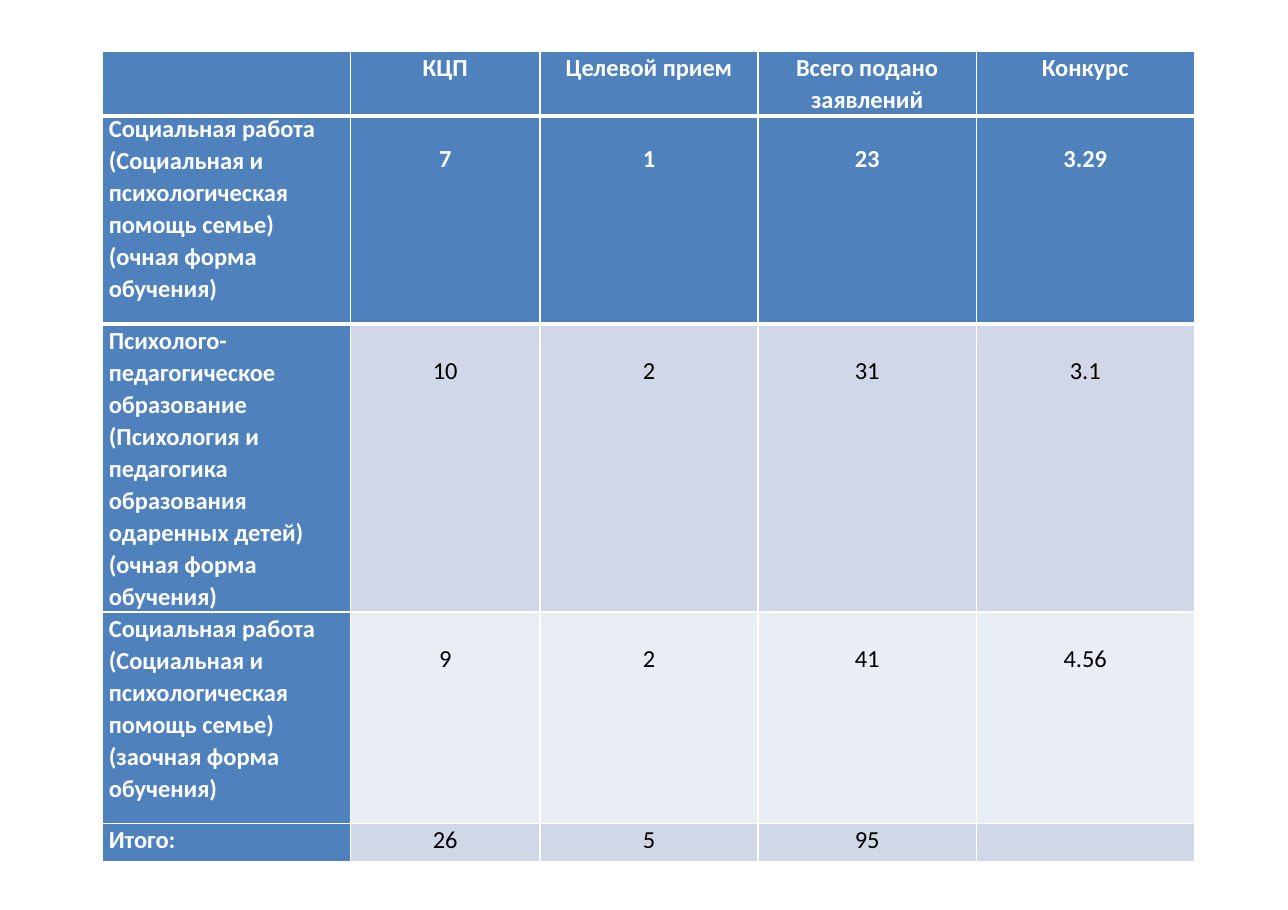
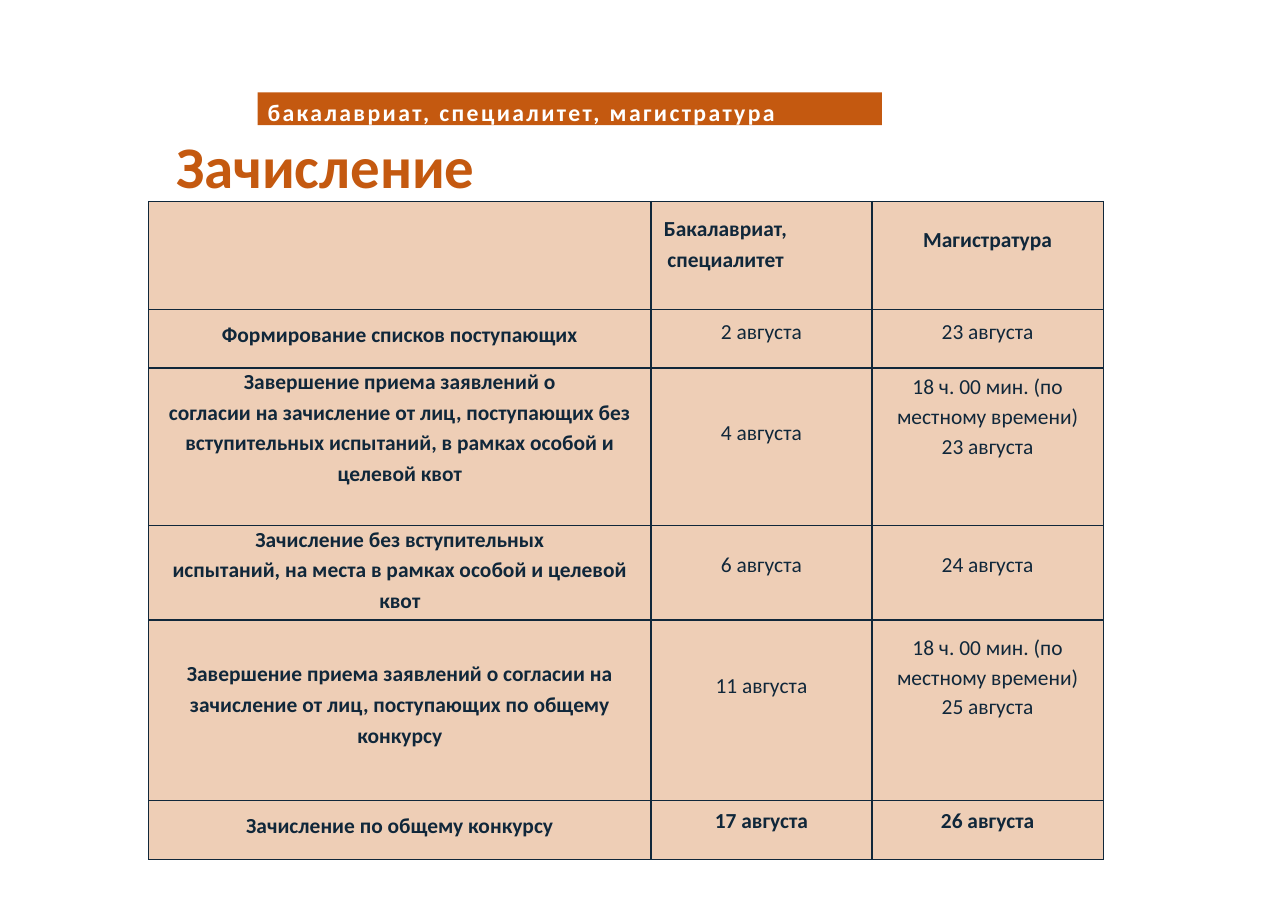
from dataclasses import dataclass

import pptx
import pptx.dml.color
import pptx.enum.shapes
import pptx.enum.text
import pptx.oxml
import pptx.oxml.ns
import pptx.slide
import pptx.table
import pptx.text.text
import pptx.util

Cm = pptx.util.Cm
Pt = pptx.util.Pt
RGBColor = pptx.dml.color.RGBColor
Align = pptx.enum.text.PP_ALIGN

FONT = "Calibri"
WHITE = RGBColor(0xFF, 0xFF, 0xFF)
BLACK = RGBColor(0x00, 0x00, 0x00)
BLUE = RGBColor(0x4F, 0x81, 0xBD)
BAND_DARK = RGBColor(0xD0, 0xD8, 0xE8)
BAND_LIGHT = RGBColor(0xE9, 0xED, 0xF4)
ORANGE = RGBColor(0xC4, 0x59, 0x10)
PEACH = RGBColor(0xEE, 0xCE, 0xB6)
NAVY = RGBColor(0x10, 0x27, 0x3A)

SINGLE = 1.0
COMPETITION_SPACING = 1.07
COMPETITION_SIDE = 0.15
VALUE_DROP = 0.7
COMPETITION_COLUMNS = (5.72, 4.37, 5.03, 5.03, 5.03)


@dataclass(frozen=True)
class TableCell:
    """Text and look of one cell; lengths in centimetres."""

    paragraphs: tuple[str, ...] = ()
    fill: RGBColor = PEACH
    color: RGBColor = NAVY
    bold: bool = False
    align: Align = Align.CENTER
    top: float = 0.0
    side: float = 0.0
    spacing: float = SINGLE
    hanging: float = 0.0


@dataclass(frozen=True)
class TableRow:
    height: float
    cells: tuple[TableCell, ...]
    bottom_line: float = 1.0


@dataclass(frozen=True)
class TableLayout:
    left: float
    top: float
    columns: tuple[float, ...]
    rows: tuple[TableRow, ...]
    font_size: float
    line_color: RGBColor


def add_run(paragraph: pptx.text.text._Paragraph, text: str, size: float,
            color: RGBColor, bold: bool) -> pptx.text.text._Run:
    run = paragraph.add_run()
    run.text = text
    run.font.name = FONT
    run.font.size = Pt(size)
    run.font.bold = bold
    run.font.color.rgb = color
    return run


def set_margins(target: pptx.table._Cell | pptx.text.text.TextFrame,
                side: float, top: float) -> None:
    target.margin_left = target.margin_right = Cm(side)
    target.margin_top = Cm(top)
    target.margin_bottom = 0


def set_borders(cell: pptx.table._Cell, color: RGBColor,
                top: float, bottom: float) -> None:
    properties = cell._tc.get_or_add_tcPr()
    for side, width in (("L", 1), ("R", 1), ("T", top), ("B", bottom)):
        properties.append(pptx.oxml.parse_xml(
            f'<a:ln{side} {pptx.oxml.ns.nsdecls("a")} w="{Pt(width)}">'
            f'<a:solidFill><a:srgbClr val="{color}"/></a:solidFill></a:ln{side}>'))


def fill_cell(cell: pptx.table._Cell, content: TableCell, font_size: float) -> None:
    cell.fill.solid()
    cell.fill.fore_color.rgb = content.fill
    set_margins(cell, content.side, content.top)
    last = len(content.paragraphs) - 1
    for index, text in enumerate(content.paragraphs):
        frame = cell.text_frame
        paragraph = frame.add_paragraph() if index else frame.paragraphs[0]
        paragraph.alignment = content.align
        # A lead-in line stays single-spaced above the main paragraph
        paragraph.line_spacing = content.spacing if index == last else SINGLE
        if content.hanging:
            properties = paragraph._p.get_or_add_pPr()
            properties.set("marL", str(Cm(content.hanging)))
            properties.set("indent", str(-Cm(content.hanging)))
        add_run(paragraph, text, font_size, content.color, content.bold)


def draw_table(slide: pptx.slide.Slide, layout: TableLayout) -> None:
    rows = layout.rows
    table = slide.shapes.add_table(
        len(rows), len(layout.columns), Cm(layout.left), Cm(layout.top),
        Cm(sum(layout.columns)), Cm(sum(row.height for row in rows))).table
    table.first_row = table.horz_banding = False
    for column, width in zip(table.columns, layout.columns):
        column.width = Cm(width)
    top_line = 1.0
    for row_index, row in enumerate(rows):
        table.rows[row_index].height = Cm(row.height)
        for column_index, content in enumerate(row.cells):
            cell = table.cell(row_index, column_index)
            set_borders(cell, layout.line_color, top_line, row.bottom_line)
            fill_cell(cell, content, layout.font_size)
        top_line = row.bottom_line


# Competition slide: cells

def blue_cell(text: str, align: Align = Align.CENTER, top: float = 0.0) -> TableCell:
    return TableCell((text,) if text else (), BLUE, WHITE, True, align, top,
                     COMPETITION_SIDE, COMPETITION_SPACING)


def value_cell(text: str, fill: RGBColor, top: float) -> TableCell:
    if fill == BLUE:
        return blue_cell(text, top=top)
    return TableCell((text,) if text else (), fill, BLACK, top=top,
                     side=COMPETITION_SIDE, spacing=COMPETITION_SPACING)


def programme_row(height: float, name: str, values: tuple[str, ...], fill: RGBColor,
                  drop: float = VALUE_DROP, bottom_line: float = 1.0) -> TableRow:
    cells = (blue_cell(name, Align.LEFT),
             *(value_cell(value, fill, drop) for value in values))
    return TableRow(height, cells, bottom_line)


def build_competition_slide(presentation: pptx.presentation.Presentation) -> None:
    slide = presentation.slides.add_slide(presentation.slide_layouts[6])
    programmes = (
        programme_row(
            4.88, "Социальная работа (Социальная и психологическая помощь семье) "
            "(очная форма обучения)", ("7", "1", "23", "3.29"), BLUE, bottom_line=3),
        programme_row(
            6.6, "Психолого-педагогическое образование (Психология и педагогика "
            "образования одаренных детей) (очная форма обучения)",
            ("10", "2", "31", "3.1"), BAND_DARK),
        programme_row(
            4.88, "Социальная работа (Социальная и психологическая помощь семье) "
            "(заочная форма обучения)", ("9", "2", "41", "4.56"), BAND_LIGHT),
        programme_row(0.89, "Итого:", ("26", "5", "95", ""), BAND_DARK, drop=0),
    )
    headings = ("", "КЦП", "Целевой прием", "Всего подано заявлений", "Конкурс")
    heading_row = TableRow(1.45, tuple(blue_cell(text) for text in headings), 3)
    for top, rows in ((2.59, programmes), (1.19, (heading_row,))):
        draw_table(slide, TableLayout(2.36, top, COMPETITION_COLUMNS, rows, 16, WHITE))


# Enrolment slide: cells

def stage_cell(*paragraphs: str, top: float, side: float = 0.0,
               spacing: float = SINGLE) -> TableCell:
    return TableCell(paragraphs, bold=True, top=top, side=side, spacing=spacing)


def date_cell(text: str, top: float, bold: bool = False) -> TableCell:
    return TableCell((text,), bold=bold, top=top)


def deadline_cell(day: str, top: float) -> TableCell:
    return TableCell((f"18 ч. 00 мин. (по местному времени) {day}",),
                     top=top, side=0.5, spacing=1.15)


def add_title(slide: pptx.slide.Slide, text: str) -> None:
    title = slide.shapes.title
    title.left, title.top, title.width, title.height = Cm(4.06), Cm(2.95), Cm(6.99), Cm(1.7)
    frame = title.text_frame
    frame.auto_size = pptx.enum.text.MSO_AUTO_SIZE.NONE
    frame.vertical_anchor = pptx.enum.text.MSO_ANCHOR.TOP
    set_margins(frame, 0, 0.05)
    paragraph = frame.paragraphs[0]
    paragraph.alignment = Align.LEFT
    add_run(paragraph, text, 38.5, ORANGE, True)


def add_banner(slide: pptx.slide.Slide, text: str) -> None:
    banner = slide.shapes.add_shape(pptx.enum.shapes.MSO_SHAPE.RECTANGLE,
                                    Cm(5.94), Cm(2.13), Cm(14.4), Cm(0.76))
    banner.shadow.inherit = False
    banner.fill.solid()
    banner.fill.fore_color.rgb = ORANGE
    banner.line.fill.background()
    frame = banner.text_frame
    frame.word_wrap = True
    frame.vertical_anchor = pptx.enum.text.MSO_ANCHOR.TOP
    set_margins(frame, 0.23, 0.12)
    paragraph = frame.paragraphs[0]
    paragraph.alignment = Align.LEFT
    run = add_run(paragraph, text, 15.5, WHITE, True)
    run.font._element.set("spc", "160")


def build_enrolment_slide(presentation: pptx.presentation.Presentation) -> None:
    slide = presentation.slides.add_slide(presentation.slide_layouts[5])
    add_title(slide, "Зачисление")
    rows = (
        TableRow(2.49, (
            TableCell(),
            TableCell(("Бакалавриат, специалитет",), bold=True, align=Align.LEFT,
                      top=0.25, side=0.3, spacing=1.16, hanging=0.08),
            stage_cell("Магистратура", top=0.6))),
        TableRow(1.35, (
            stage_cell("Формирование списков поступающих", top=0.28),
            date_cell("2 августа", 0.23),
            date_cell("23 августа", 0.23))),
        TableRow(3.63, (
            stage_cell("Завершение приема заявлений о",
                       "согласии на зачисление от лиц, поступающих без вступительных "
                       "испытаний, в рамках особой и целевой квот",
                       top=0.03, side=0.2, spacing=1.17),
            date_cell("4 августа", 1.2),
            deadline_cell("23 августа", 0.05))),
        TableRow(2.18, (
            stage_cell("Зачисление без вступительных",
                       "испытаний, на места в рамках особой и целевой квот",
                       top=0.03, side=0.2, spacing=1.17),
            date_cell("6 августа", 0.62),
            date_cell("24 августа", 0.62))),
        TableRow(4.17, (
            stage_cell("Завершение приема заявлений о согласии на зачисление от лиц, "
                       "поступающих по общему конкурсу",
                       top=0.85, side=0.64, spacing=1.18),
            date_cell("11 августа", 1.22),
            deadline_cell("25 августа", 0.25))),
        TableRow(1.35, (
            stage_cell("Зачисление по общему конкурсу", top=0.28),
            date_cell("17 августа", 0.18, bold=True),
            date_cell("26 августа", 0.18, bold=True))),
    )
    draw_table(slide, TableLayout(3.43, 4.65, (11.58, 5.1, 5.33), rows, 14, NAVY))
    add_banner(slide, "бакалавриат, специалитет, магистратура")


def main() -> None:
    presentation = pptx.Presentation()
    presentation.slide_width, presentation.slide_height = Cm(29.7), Cm(20.99)
    build_competition_slide(presentation)
    build_enrolment_slide(presentation)
    presentation.save("out.pptx")


if __name__ == "__main__":
    main()
